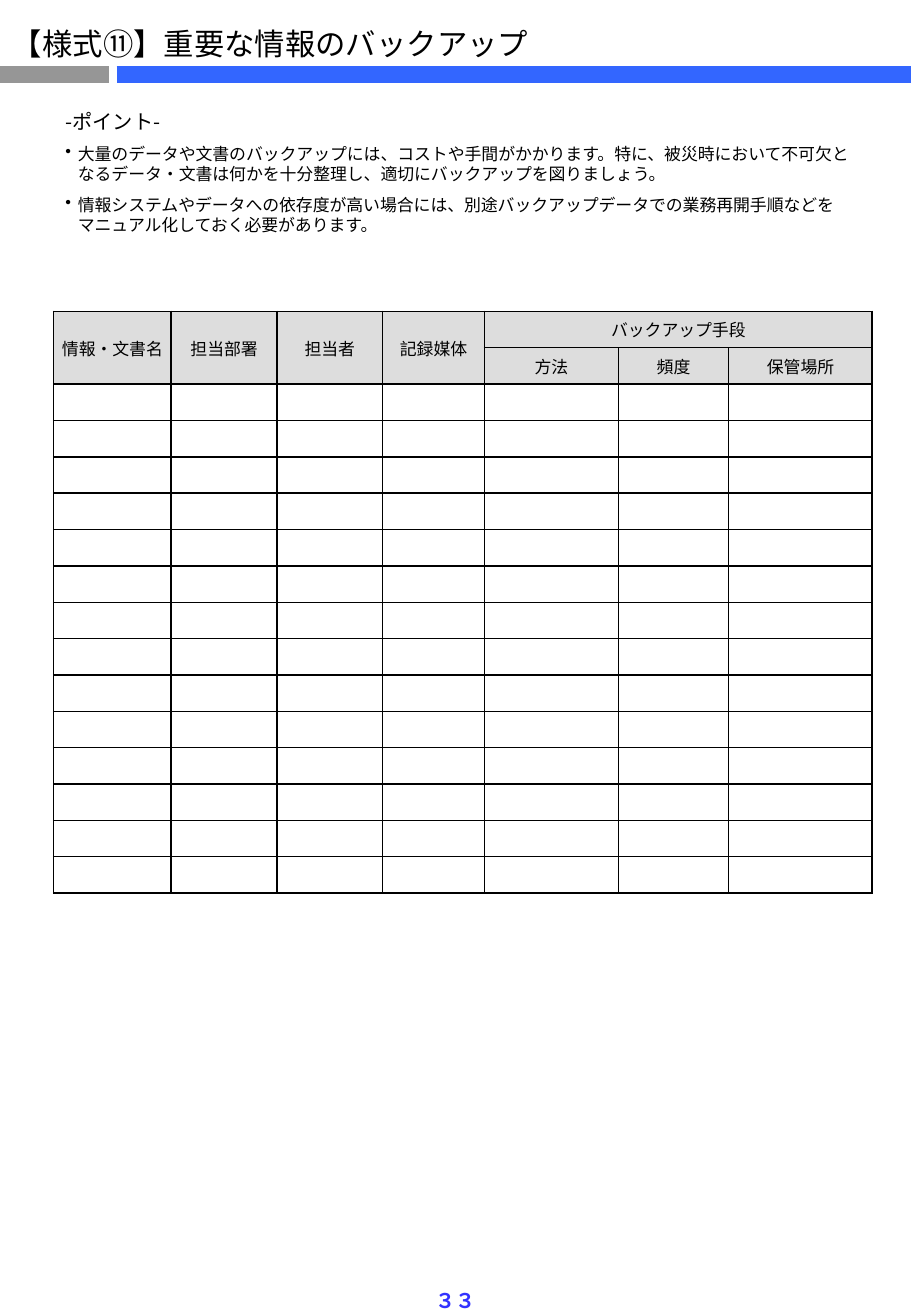
from dataclasses import dataclass

from lxml.etree import SubElement
from pptx import Presentation
from pptx.dml.color import RGBColor
from pptx.enum.shapes import MSO_CONNECTOR
from pptx.enum.text import MSO_ANCHOR, PP_ALIGN
from pptx.oxml.ns import qn
from pptx.slide import Slide
from pptx.table import _Cell
from pptx.text.text import TextFrame, _Paragraph
from pptx.util import Cm, Pt

FONT = "Noto Sans CJK JP"
COLORS = {
    "text": "000000",
    "grey_bar": "969696",
    "blue_bar": "3366FF",
    "page_number": "3333FF",
    "header": "DDDDDD",
    "border": "000000",
}
COLUMN_WIDTHS = [2.46, 2.21, 2.21, 2.13, 2.8, 2.31, 3.0]
HEADER_ROWS = 2
ROW_COUNT = 16
ROW_HEIGHT = 0.76


@dataclass
class Bar:
    start: float
    end: float
    color: str


@dataclass
class Heading:
    text: str
    row: int
    column: int
    last_row: int
    last_column: int


@dataclass
class Point:
    text: str
    size: int
    bullet: bool


BARS = [Bar(0, 2.28, "grey_bar"), Bar(2.44, 19.05, "blue_bar")]

HEADINGS = [
    Heading("情報・文書名", 0, 0, 1, 0),
    Heading("担当部署", 0, 1, 1, 1),
    Heading("担当者", 0, 2, 1, 2),
    Heading("記録媒体", 0, 3, 1, 3),
    Heading("バックアップ手段", 0, 4, 0, 6),
    Heading("方法", 1, 4, 1, 4),
    Heading("頻度", 1, 5, 1, 5),
    Heading("保管場所", 1, 6, 1, 6),
]

POINTS = [
    Point("-ポイント-", 12, False),
    Point("大量のデータや文書のバックアップには、コストや手間がかかります。特に、被災時において不可欠と"
          "なるデータ・文書は何かを十分整理し、適切にバックアップを図りましょう。", 10, True),
    Point("情報システムやデータへの依存度が高い場合には、別途バックアップデータでの業務再開手順などを\n"
          "マニュアル化しておく必要があります。", 10, True),
]


def add_span(para: _Paragraph, text: str, size: int, color: str = "text", bold: bool = False) -> None:
    for index, line in enumerate(text.split("\n")):
        if index:
            para.add_line_break()
        span = para.add_run()
        span.text = line
        span.font.name = FONT
        span.font.size = Pt(size)
        span.font.bold = bold
        span.font.color.rgb = RGBColor.from_string(COLORS[color])
        SubElement(span.font._element, qn("a:ea"), typeface=FONT)


def add_text_frame(page: Slide, left: float, top: float, width: float, height: float, wrap: bool) -> TextFrame:
    frame = page.shapes.add_textbox(Cm(left), Cm(top), Cm(width), Cm(height)).text_frame
    frame.word_wrap = wrap
    return frame


def add_bar(page: Slide, bar: Bar) -> None:
    line = page.shapes.add_connector(MSO_CONNECTOR.STRAIGHT, Cm(bar.start), Cm(1.56), Cm(bar.end), Cm(1.56))
    line.line.color.rgb = RGBColor.from_string(COLORS[bar.color])
    line.line.width = Pt(10)
    SubElement(line._element.spPr, qn("a:effectLst"))


def add_points(page: Slide) -> None:
    frame = add_text_frame(page, 1.12, 2.16, 16.99, 3.63, True)
    for index, point in enumerate(POINTS):
        para = frame.add_paragraph() if index else frame.paragraphs[0]
        para.space_after = Pt(6)
        properties = para._p.get_or_add_pPr()
        properties.set("marL", str(Cm(0.26)))
        properties.set("indent", str(Cm(-0.26)))
        if point.bullet:
            SubElement(properties, qn("a:buChar"), char="•")
        add_span(para, point.text, point.size)


def style_cell(cell: _Cell, is_header: bool) -> None:
    cell.vertical_anchor = MSO_ANCHOR.MIDDLE
    cell.margin_left = cell.margin_right = Cm(0.1)
    cell.margin_top = cell.margin_bottom = Cm(0.12)
    properties = cell._tc.get_or_add_tcPr()
    for side in ("lnL", "lnR", "lnT", "lnB"):
        border = SubElement(properties, qn(f"a:{side}"), w=str(Pt(1)))
        fill = SubElement(border, qn("a:solidFill"))
        SubElement(fill, qn("a:srgbClr"), val=COLORS["border"])
    if is_header:
        cell.fill.solid()
        cell.fill.fore_color.rgb = RGBColor.from_string(COLORS["header"])
    else:
        cell.fill.background()
        SubElement(cell.text_frame.paragraphs[0]._p, qn("a:endParaRPr"), sz="1000")


def add_backup_table(page: Slide) -> None:
    table = page.shapes.add_table(
        ROW_COUNT, len(COLUMN_WIDTHS), Cm(1.12), Cm(6.51), Cm(sum(COLUMN_WIDTHS)), Cm(ROW_COUNT * ROW_HEIGHT)
    ).table
    table.first_row = False
    table.horz_banding = False
    for column, width in zip(table.columns, COLUMN_WIDTHS):
        column.width = Cm(width)
    for index, row in enumerate(table.rows):
        row.height = Cm(ROW_HEIGHT)
        for cell in row.cells:
            style_cell(cell, index < HEADER_ROWS)
    for heading in HEADINGS:
        cell = table.cell(heading.row, heading.column)
        last_cell = table.cell(heading.last_row, heading.last_column)
        if (heading.row, heading.column) != (heading.last_row, heading.last_column):
            cell.merge(last_cell)
        para = cell.text_frame.paragraphs[0]
        para.alignment = PP_ALIGN.CENTER
        add_span(para, heading.text, 10)


def main() -> None:
    deck = Presentation()
    deck.slide_width = Cm(19.05)
    deck.slide_height = Cm(27.51)
    page = deck.slides.add_slide(deck.slide_layouts[6])
    for bar in BARS:
        add_bar(page, bar)
    add_backup_table(page)
    title = add_text_frame(page, 0, 0.41, 11.4, 1.02, False)
    add_span(title.paragraphs[0], "【様式⑪】重要な情報のバックアップ", 18)
    page_number = add_text_frame(page, 8.84, 26.8, 1.37, 0.79, False)
    page_number.paragraphs[0].alignment = PP_ALIGN.CENTER
    add_span(page_number.paragraphs[0], "３３", 12, "page_number", True)
    add_points(page)
    deck.save("out.pptx")


if __name__ == "__main__":
    main()
